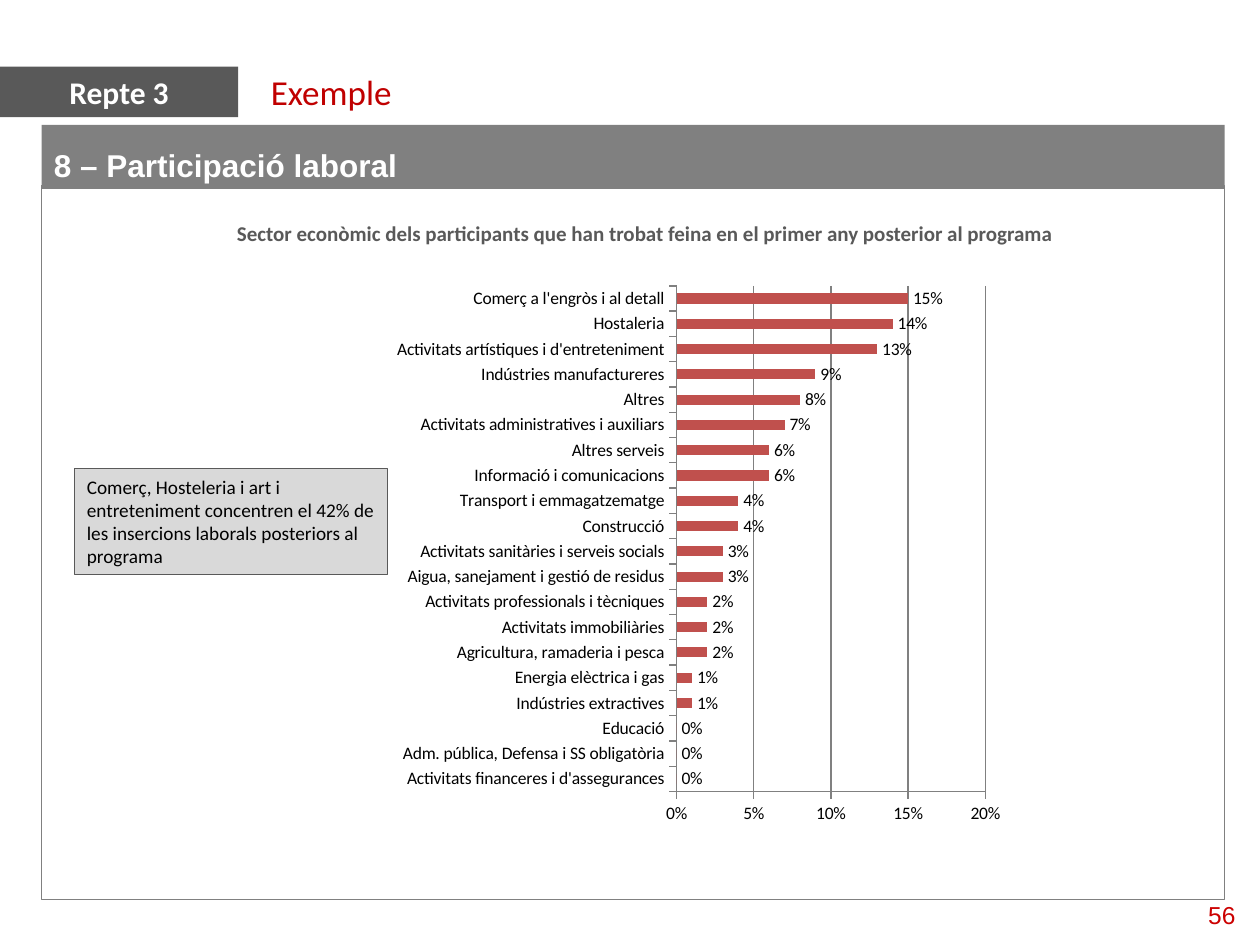
from lxml.etree import SubElement
from pptx import Presentation
from pptx.chart.data import CategoryChartData
from pptx.dml.color import RGBColor
from pptx.enum.chart import XL_CHART_TYPE, XL_LABEL_POSITION, XL_TICK_MARK
from pptx.enum.shapes import MSO_SHAPE
from pptx.enum.text import MSO_ANCHOR, MSO_AUTO_SIZE, PP_ALIGN
from pptx.oxml.ns import qn
from pptx.util import Inches, Pt

COLUMNS, ROWS = 100, 75
WIDTH, HEIGHT = Inches(10), Inches(7.5)
GRAY, DARK_GRAY, LIGHT_GRAY = "808080", "595959", "D9D9D9"
RED, BAR_RED, PAGE_RED = "C00000", "C0504D", "CC0000"
WHITE, BLACK = "FFFFFF", "000000"

SECTORS = [
    ("Activitats financeres i d'assegurances", 0),
    ("Adm. pública, Defensa i SS obligatòria", 0),
    ("Educació", 0),
    ("Indústries extractives", 0.01),
    ("Energia elèctrica i gas", 0.01),
    ("Agricultura, ramaderia i pesca", 0.02),
    ("Activitats immobiliàries", 0.02),
    ("Activitats professionals i tècniques", 0.02),
    ("Aigua, sanejament i gestió de residus", 0.03),
    ("Activitats sanitàries i serveis socials", 0.03),
    ("Construcció", 0.04),
    ("Transport i emmagatzematge", 0.04),
    ("Informació i comunicacions", 0.06),
    ("Altres serveis", 0.06),
    ("Activitats administratives i auxiliars", 0.07),
    ("Altres", 0.08),
    ("Indústries manufactureres", 0.09),
    ("Activitats artístiques i d'entreteniment", 0.13),
    ("Hostaleria", 0.14),
    ("Comerç a l'engròs i al detall", 0.15),
]


def color(value):
    return RGBColor.from_string(value)


def grid(column, row, columns, rows):
    return (
        round(WIDTH * column / COLUMNS),
        round(HEIGHT * row / ROWS),
        round(WIDTH * columns / COLUMNS),
        round(HEIGHT * rows / ROWS),
    )


def set_values(target, values):
    for name, value in values.items():
        setattr(target, name, value)


def set_font(font, size, tone, **values):
    set_values(font, {"size": Pt(size), "name": "Calibri", **values})
    font.color.rgb = color(tone)


def write(box, text, size, tone, align=PP_ALIGN.LEFT, anchor=MSO_ANCHOR.TOP, **font):
    frame = box.text_frame
    set_values(frame, {
        "word_wrap": True,
        "auto_size": MSO_AUTO_SIZE.NONE,
        "vertical_anchor": anchor,
        "margin_left": Inches(0.1),
        "margin_right": Inches(0.1),
        "margin_top": Inches(0.05),
        "margin_bottom": Inches(0.05),
    })
    para = frame.paragraphs[0]
    para.alignment = align
    span = para.add_run()
    span.text = text
    set_font(span.font, size, tone, **font)


def add_title(page, place, text):
    title = page.shapes.title
    set_values(title, dict(zip(("left", "top", "width", "height"), place)))
    write(title, text, 20, RED)


def add_text(page, place, *text, **values):
    write(page.shapes.add_textbox(*place), *text, **values)


def add_panel(page, place, fill=None, line=None, line_width=0.75):
    panel = page.shapes.add_shape(MSO_SHAPE.RECTANGLE, *place)
    panel.shadow.inherit = False
    if fill:
        panel.fill.solid()
        panel.fill.fore_color.rgb = color(fill)
    else:
        panel.fill.background()
    if line:
        panel.line.color.rgb = color(line)
        panel.line.width = Pt(line_width)
    else:
        panel.line.fill.background()
    return panel


def set_plot_area(chart, **shares):
    area = chart.plots[0]._element.getparent()
    old = area.find(qn("c:layout"))
    if old is not None:
        area.remove(old)
    layout = SubElement(area, qn("c:layout"))
    area.insert(0, layout)
    manual = SubElement(layout, qn("c:manualLayout"))
    settings = {"layoutTarget": "inner", "xMode": "edge", "yMode": "edge", **shares}
    for name, value in settings.items():
        SubElement(manual, qn(f"c:{name}")).set("val", str(value))


def style_axis(axis):
    axis.major_tick_mark = XL_TICK_MARK.OUTSIDE
    axis.minor_tick_mark = XL_TICK_MARK.NONE
    axis.format.line.color.rgb = color(GRAY)
    axis.format.line.width = Pt(0.75)


def add_bars(page, place, sectors):
    data = CategoryChartData(number_format="0%")
    names, shares = zip(*sectors)
    data.categories = names
    data.add_series("Series 1", shares)
    chart = page.shapes.add_chart(XL_CHART_TYPE.BAR_CLUSTERED, *place, data).chart
    set_values(chart, {"has_legend": False, "has_title": False})
    set_font(chart.font, 10, BLACK)

    plot = chart.plots[0]
    set_values(plot, {"gap_width": 150, "vary_by_categories": False,
                      "has_data_labels": True})
    set_values(plot.data_labels, {
        "show_value": True,
        "number_format": "0%",
        "number_format_is_linked": False,
        "position": XL_LABEL_POSITION.OUTSIDE_END,
    })
    bars = plot.series[0].format.fill
    bars.solid()
    bars.fore_color.rgb = color(BAR_RED)

    style_axis(chart.category_axis)
    axis = chart.value_axis
    style_axis(axis)
    set_values(axis, {"minimum_scale": 0, "maximum_scale": 0.2,
                      "major_unit": 0.05, "has_major_gridlines": True})
    set_values(axis.tick_labels, {"number_format": "0%",
                                  "number_format_is_linked": False})
    axis.major_gridlines.format.line.color.rgb = color(GRAY)
    axis.major_gridlines.format.line.width = Pt(0.75)
    set_plot_area(chart, x=0.46, y=0.02, w=0.49, h=0.9)


def main():
    deck = Presentation()
    set_values(deck, {"slide_width": WIDTH, "slide_height": HEIGHT})
    page = deck.slides.add_slide(deck.slide_layouts[5])

    add_title(page, grid(20.5, 5.1, 73.6, 4), "Exemple")
    add_text(page, grid(94.9, 70.9, 5.1, 3.4), "56", 14, PAGE_RED, name="Arial")

    heading = add_panel(page, grid(3.3, 9.9, 93.9, 5.1), GRAY)
    write(heading, "8 – Participació laboral", 18, WHITE,
          anchor=MSO_ANCHOR.MIDDLE, name="Arial", bold=True)
    heading.text_frame.margin_top = Inches(0.17)
    heading.text_frame.margin_bottom = Inches(0.04)
    add_panel(page, grid(3.3, 14.7, 93.9, 56.7), line=GRAY)

    add_text(page, grid(12.2, 17, 78, 4),
             "Sector econòmic dels participants que han trobat feina "
             "en el primer any posterior al programa",
             12, DARK_GRAY, align=PP_ALIGN.CENTER, bold=True)
    add_bars(page, grid(30.7, 21.8, 50, 44.6), SECTORS)

    tag = add_panel(page, grid(0, 5.3, 18.9, 4), DARK_GRAY)
    write(tag, "Repte 3", 18, WHITE, align=PP_ALIGN.CENTER,
          anchor=MSO_ANCHOR.MIDDLE, bold=True)
    note = add_panel(page, grid(5.9, 37.2, 24.8, 8.4), LIGHT_GRAY, DARK_GRAY, 0.25)
    write(note, "Comerç, Hosteleria i art i entreteniment concentren el 42% "
                "de les insercions laborals posteriors al programa", 11, BLACK)

    deck.save("out.pptx")


if __name__ == "__main__":
    main()
